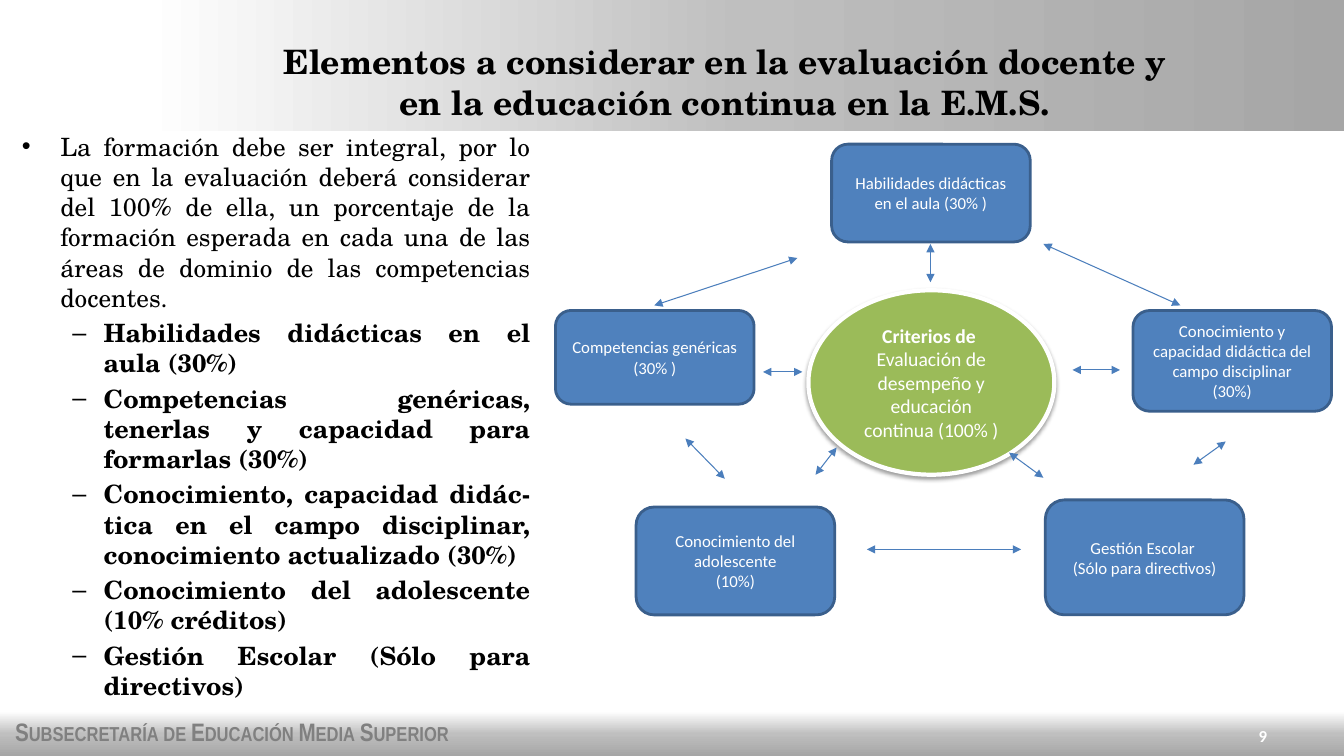
from copy import deepcopy

from lxml import etree
from pptx import Presentation
from pptx.dml.color import RGBColor
from pptx.enum.shapes import MSO_CONNECTOR, MSO_SHAPE
from pptx.enum.text import MSO_ANCHOR, MSO_AUTO_SIZE, PP_ALIGN
from pptx.oxml import parse_xml
from pptx.oxml.ns import nsdecls, qn
from pptx.util import Inches, Pt

LEFT, CENTER, RIGHT, JUSTIFY = PP_ALIGN.LEFT, PP_ALIGN.CENTER, PP_ALIGN.RIGHT, PP_ALIGN.JUSTIFY
TOP, MIDDLE = MSO_ANCHOR.TOP, MSO_ANCHOR.MIDDLE
RECTANGLE, ROUNDED, OVAL = MSO_SHAPE.RECTANGLE, MSO_SHAPE.ROUNDED_RECTANGLE, MSO_SHAPE.OVAL
STRAIGHT = MSO_CONNECTOR.STRAIGHT
NO_AUTOFIT = MSO_AUTO_SIZE.NONE

WIDTH, HEIGHT = Inches(13.33), Inches(7.5)
SERIF, SANS, NARROW = "TeX Gyre Schola", "Calibri", "Arial Narrow"
COLORS = {
    "white": "FFFFFF", "black": "000000", "footer": "808080",
    "silver": "BFBFBF", "gray": "A6A6A6",
    "box": "4F81BD", "box_line": "3A5F8C", "arrow": "4B7EBC", "criteria": "9BBB59",
}

# All places are percentages of the slide's width and height.
BOX_WIDTH = 14.78
BOXES = [  # left, top, height, paragraphs
    (41.33, 41.07, 12.4, ["Competencias genéricas", "(30% )"]),
    (47.33, 67.07, 14.27, ["Conocimiento del adolescente", "(10%)"]),
    (77.78, 66.13, 15.2, ["Gestión Escolar ", "(Sólo para directivos)"]),
    (84.3, 41.07, 13.33, ["Conocimiento y capacidad didáctica del campo disciplinar", "(30%)"]),
    (61.88, 19.07, 12.93, ["Habilidades didácticas en el aula (30% )"]),
]
ARROWS = [  # from x, from y, to x, to y
    (48.68, 40.4, 59.33, 34.13),
    (77.63, 32.27, 87.83, 40.4),
    (51, 58, 53.93, 63.33),
    (91.2, 58.4, 88.8, 61.47),
    (64.5, 72.67, 75.98, 72.67),
    (56.78, 49.2, 59.7, 49.2),
    (79.8, 48.93, 83.33, 48.93),
    (69.23, 32.27, 69.23, 37.33),
    (60.68, 62.8, 62.25, 59.2),
    (75.08, 59.87, 77.63, 63.2),
]
INTRODUCTION = (
    "La formación debe ser integral, por lo que en la evaluación deberá considerar "
    "del 100% de ella, un porcentaje de la formación esperada en cada una de las "
    "áreas de dominio de las competencias docentes."
)
ELEMENTS = [
    "Habilidades didácticas en el aula (30%)",
    "Competencias genéricas, tenerlas y capacidad para formarlas (30%)",
    "Conocimiento, capacidad didác- tica en el campo disciplinar, conocimiento actualizado (30%)",
    "Conocimiento del adolescente (10% créditos)",
    "Gestión Escolar (Sólo para directivos)",
]


def color(name):
    return RGBColor.from_string(COLORS[name])


def place(left, top, width, height):
    """Turn percentages of the slide into lengths."""
    return tuple(int(share * side / 100) for share, side in
                 zip((left, top, width, height), (WIDTH, HEIGHT, WIDTH, HEIGHT)))


def style(paragraph, font_name, size, color_name, bold=False, align=CENTER):
    paragraph.alignment = align
    font = paragraph.font
    font.name, font.size, font.bold = font_name, Pt(size), bold
    font.color.rgb = color(color_name)


def write(shape, lines, anchor=MIDDLE):
    """Fill the shape with one paragraph per line and return the paragraphs."""
    frame = shape.text_frame
    frame.text = "\n".join(lines)
    frame.word_wrap = True
    frame.auto_size = NO_AUTOFIT
    frame.vertical_anchor = anchor
    return frame.paragraphs


def add_text(slide, area, lines, anchor=MIDDLE):
    return write(slide.shapes.add_textbox(*place(*area)), lines, anchor)


def add_band(slide, area, angle):
    band = slide.shapes.add_shape(RECTANGLE, *place(*area))
    band.shadow.inherit = False
    band.line.fill.background()
    band.fill.gradient()
    band.fill.gradient_angle = angle
    stop_list = band.element.spPr.find(".//" + qn("a:gsLst"))
    stop_list.append(deepcopy(stop_list[0]))
    for stop, position, name in zip(band.fill.gradient_stops, (0, 0.5, 1),
                                    ("white", "silver", "gray")):
        stop.position = position
        stop.color.rgb = color(name)


def add_node(slide, kind, area, fill, line, line_width, lines, size):
    node = slide.shapes.add_shape(kind, *place(*area))
    node.shadow.inherit = False
    node.fill.solid()
    node.fill.fore_color.rgb = color(fill)
    node.line.color.rgb = color(line)
    node.line.width = Pt(line_width)
    for paragraph in write(node, lines):
        style(paragraph, SANS, size, "white")
    return node


def add_criteria(slide):
    node = add_node(slide, OVAL, (60.15, 38.4, 18.3, 24.4), "criteria", "white", 3,
                    ["Criterios de ", "Evaluación de desempeño y educación continua (100% )"], 14)
    node.text_frame.paragraphs[0].font.bold = True
    effects = node.element.spPr.find(qn("a:effectLst"))
    effects.append(parse_xml(
        f'<a:outerShdw {nsdecls("a")} blurRad="{Pt(3.1)}" dist="{Pt(1.6)}" dir="5400000" '
        f'rotWithShape="0"><a:srgbClr val="{COLORS["black"]}"><a:alpha val="38000"/>'
        '</a:srgbClr></a:outerShdw>'))


def add_double_arrow(slide, ends):
    arrow = slide.shapes.add_connector(STRAIGHT, *place(*ends))
    arrow.line.color.rgb = color("arrow")
    arrow.line.width = Pt(0.75)
    line = arrow.line._get_or_add_ln()
    for end in ("a:headEnd", "a:tailEnd"):
        etree.SubElement(line, qn(end), type="triangle")
    etree.SubElement(arrow.element.spPr, qn("a:effectLst"))


def add_bullet(paragraph, mark, margin, indent):
    properties = paragraph._p.get_or_add_pPr()
    properties.set("marL", str(Inches(margin)))
    properties.set("indent", str(Inches(indent)))
    etree.SubElement(properties, qn("a:buFont"), typeface="Arial")
    etree.SubElement(properties, qn("a:buChar"), char=mark)


def add_outline(slide):
    introduction, *elements = add_text(slide, (0.9, 16.67, 39.3, 78),
                                       [INTRODUCTION, *ELEMENTS], TOP)
    add_bullet(introduction, "•", 0.38, -0.38)
    style(introduction, SERIF, 18, "black", align=JUSTIFY)
    for element in elements:
        element.level = 1
        add_bullet(element, "–", 0.81, -0.31)
        style(element, SERIF, 18, "black", bold=True, align=JUSTIFY)
        element.space_before = Pt(3.6)


def add_title(slide):
    title = slide.shapes.title
    title.left, title.top, title.width, title.height = place(20.25, 4, 67.35, 13.6)
    paragraph, = write(title, ["Elementos a considerar en la evaluación docente y "
                               "en la educación continua en la E.M.S."])
    style(paragraph, SERIF, 24, "black", bold=True)
    slide.shapes.element.append(title.element)  # in front of the bands


def add_footer(slide):
    name, = add_text(slide, (0.38, 94.13, 64.58, 5.33),
                     ["Subsecretaría de Educación Media Superior"], TOP)
    style(name, NARROW, 18, "footer", bold=True, align=LEFT)
    name.runs[0].font._element.set("cap", "small")
    number, = add_text(slide, (71.7, 94.67, 23.33, 5.33), ["9"])
    style(number, SANS, 12, "white", bold=True, align=RIGHT)


def main():
    presentation = Presentation()
    presentation.slide_width, presentation.slide_height = WIDTH, HEIGHT
    slide = presentation.slides.add_slide(presentation.slide_layouts.get_by_name("Title Only"))
    add_band(slide, (0, 94.13, 100, 5.87), 270)
    add_band(slide, (10.65, 0, 89.35, 17.33), 0)
    add_footer(slide)
    add_title(slide)
    add_outline(slide)
    for left, top, height, lines in BOXES:
        add_node(slide, ROUNDED, (left, top, BOX_WIDTH, height), "box", "box_line", 2, lines, 12)
    add_criteria(slide)
    for ends in ARROWS:
        add_double_arrow(slide, ends)
    presentation.save("out.pptx")


if __name__ == "__main__":
    main()
